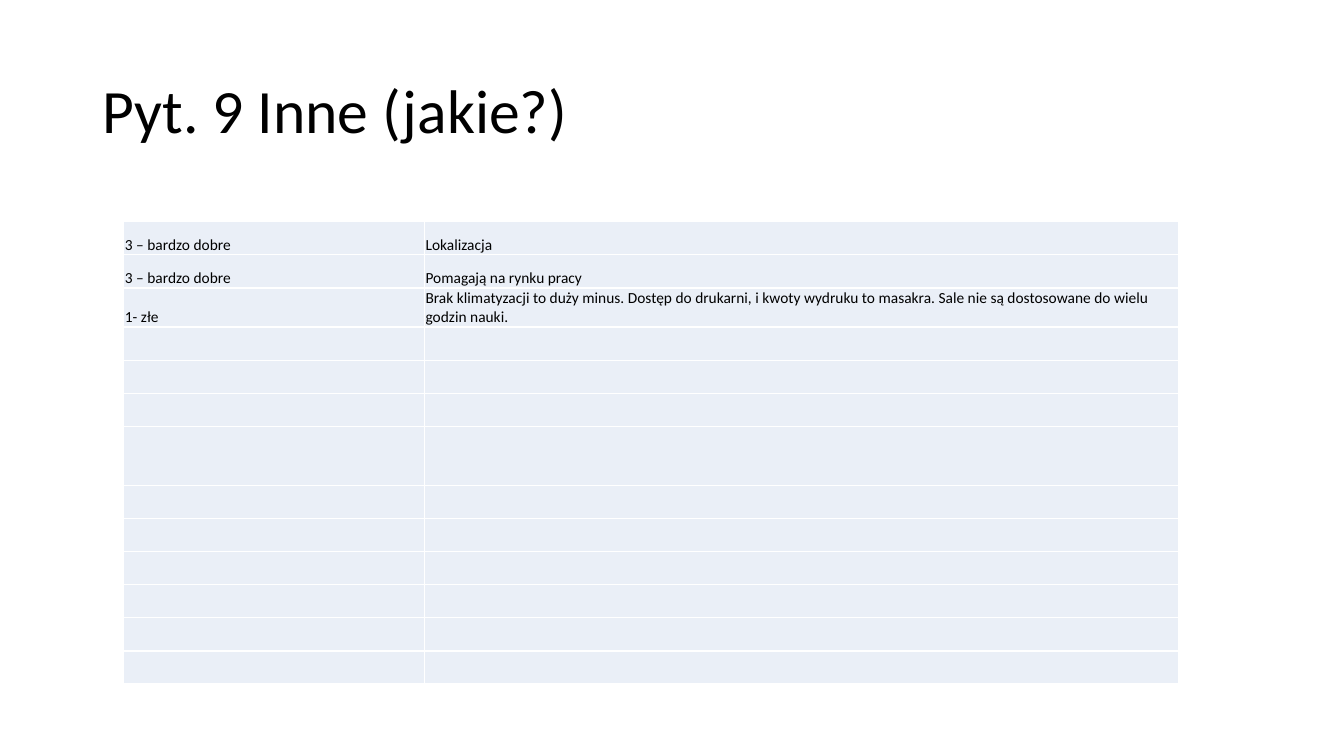
from lxml.etree import SubElement
from pptx import Presentation
from pptx.dml.color import RGBColor
from pptx.enum.text import MSO_ANCHOR, PP_ALIGN
from pptx.oxml.ns import qn
from pptx.util import Pt

TITLE = "Pyt. 9 Inne (jakie?)"
ANSWERS = [
    ("3 – bardzo dobre", "Lokalizacja"),
    ("3 – bardzo dobre", "Pomagają na rynku pracy"),
    ("1- złe", "Brak klimatyzacji to duży minus. Dostęp do drukarni, i kwoty wydruku to masakra. "
               "Sale nie są dostosowane do wielu godzin nauki."),
]
COLORS = {"text": "000000", "cell": "EAEFF7", "border": "FFFFFF"}
FONT = "Calibri"
ROW_COUNT = 13
ROW_HEIGHT = 23.65
TALL_ROWS = {6: 42.25}
COLUMN_WIDTHS = (214.75, 538.75)
TABLE_LEFT, TABLE_TOP = 88.5, 158.4
CELL_SIZE = 11


def write_text(frame, text, size, align=PP_ALIGN.LEFT, spacing=None):
    para = frame.paragraphs[0]
    para.alignment = align
    para.line_spacing = spacing
    span = para.add_run()
    span.text = text
    span.font.size = Pt(size)
    span.font.name = FONT
    span.font.color.rgb = RGBColor.from_string(COLORS["text"])


def add_borders(cell, color, width):
    properties = cell._tc.get_or_add_tcPr()
    for position, side in enumerate(("lnL", "lnR", "lnT", "lnB")):
        line = properties.makeelement(qn(f"a:{side}"), {"w": str(Pt(width))})
        fill = SubElement(line, qn("a:solidFill"))
        SubElement(fill, qn("a:srgbClr"), val=color)
        properties.insert(position, line)


def format_cell(cell):
    cell.fill.solid()
    cell.fill.fore_color.rgb = RGBColor.from_string(COLORS["cell"])
    cell.vertical_anchor = MSO_ANCHOR.BOTTOM
    cell.margin_left = cell.margin_right = cell.margin_top = Pt(0.75)
    cell.margin_bottom = Pt(0)
    add_borders(cell, COLORS["border"], 1)


def add_answer_table(page):
    heights = [TALL_ROWS.get(index, ROW_HEIGHT) for index in range(ROW_COUNT)]
    frame = page.shapes.add_table(
        ROW_COUNT, len(COLUMN_WIDTHS), Pt(TABLE_LEFT), Pt(TABLE_TOP),
        Pt(sum(COLUMN_WIDTHS)), Pt(sum(heights)))
    table = frame.table
    table.first_row = table.horz_banding = False
    for column, width in zip(table.columns, COLUMN_WIDTHS):
        column.width = Pt(width)
    for row, height in zip(table.rows, heights):
        row.height = Pt(height)
    for cell in table.iter_cells():
        format_cell(cell)
        # Keeps the empty rows from growing to the default text size.
        SubElement(cell.text_frame.paragraphs[0]._p, qn("a:endParaRPr"), sz=str(CELL_SIZE * 100))
    for row, answer in zip(table.rows, ANSWERS):
        for cell, text in zip(row.cells, answer):
            write_text(cell.text_frame, text, CELL_SIZE)


def main():
    deck = Presentation()
    deck.slide_width, deck.slide_height = Pt(960), Pt(540)
    page = deck.slides.add_slide(deck.slide_layouts[5])
    title = page.shapes.title
    title.left, title.top, title.width, title.height = Pt(66), Pt(28.75), Pt(828), Pt(104.4)
    title.text_frame.vertical_anchor = MSO_ANCHOR.MIDDLE
    write_text(title.text_frame, TITLE, 44, spacing=0.9)
    add_answer_table(page)
    deck.save("out.pptx")


if __name__ == "__main__":
    main()
